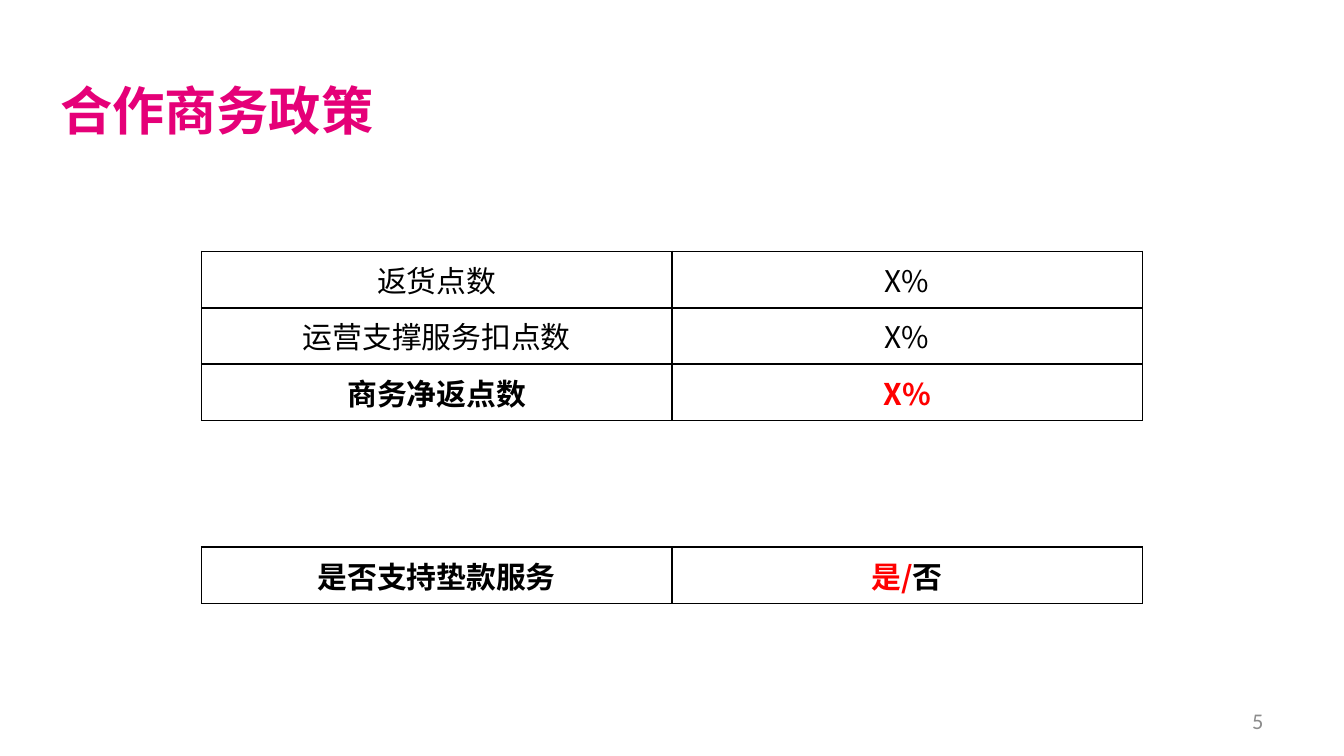
"""Build the slide on business cooperation policy."""
from lxml.etree import SubElement
from pptx import Presentation
from pptx.dml.color import RGBColor
from pptx.enum.text import MSO_ANCHOR as Anchor, PP_ALIGN as Align
from pptx.oxml.ns import qn
from pptx.util import Inches, Pt

COLORS = {"title": "E50078", "text": "000000", "accent": "FF0000", "number": "8C8C8C"}
CJK = "Noto Sans CJK SC"


def add_span(para, text, color, size, bold=False, name=CJK):
    span = para.add_run()
    span.text = text
    formats = {"size": Pt(size), "bold": bold, "name": name}
    for key, value in formats.items():
        setattr(span.font, key, value)
    span.font.color.rgb = RGBColor.from_string(COLORS[color])
    SubElement(span.font._element, qn("a:ea"), typeface=name)


def draw_borders(cell):
    properties = cell._tc.get_or_add_tcPr()
    for position, side in enumerate(("lnL", "lnR", "lnT", "lnB")):
        line = SubElement(properties, qn(f"a:{side}"), w=str(Pt(1)))
        fill = SubElement(line, qn("a:solidFill"))
        SubElement(fill, qn("a:srgbClr"), val=COLORS["text"])
        properties.insert(position, line)


deck = Presentation()
deck.slide_width, deck.slide_height = Inches(10), Inches(10) * 9 // 16
page = deck.slides.add_slide(deck.slide_layouts[6])

title = page.shapes.add_textbox(Inches(0.35), Inches(0.53), Inches(3.94), Inches(0.62))
title.text_frame.word_wrap = True
add_span(title.text_frame.paragraphs[0], "合作商务政策", "title", 28, True)

tables = [
    (1.87, [
        ("返货点数", [("X%", "text")], False),
        ("运营支撑服务扣点数", [("X%", "text")], False),
        ("商务净返点数", [("X%", "accent")], True),
    ]),
    (4.07, [("是否支持垫款服务", [("是/", "accent"), ("否", "text")], True)]),
]
row_height = Inches(0.42)
for top, rows in tables:
    frame = page.shapes.add_table(
        len(rows), 2, Inches(1.5), Inches(top), Inches(7), row_height * len(rows))
    table = frame.table
    for flag in ("first_row", "horz_banding"):
        setattr(table, flag, False)
    for row, (label, values, bold) in enumerate(rows):
        table.rows[row].height = row_height
        for column, spans in enumerate(([(label, "text")], values)):
            cell = table.cell(row, column)
            cell.fill.background()
            cell.vertical_anchor = Anchor.MIDDLE
            draw_borders(cell)
            para = cell.text_frame.paragraphs[0]
            para.alignment = Align.CENTER
            for text, color in spans:
                add_span(para, text, color, 16, bold)

number = page.shapes.add_textbox(Inches(7.17), Inches(5.21), Inches(2.33), Inches(0.3))
number.text_frame.word_wrap = True
number.text_frame.vertical_anchor = Anchor.MIDDLE
para = number.text_frame.paragraphs[0]
para.alignment = Align.RIGHT
add_span(para, "5", "number", 12, name="Calibri")

deck.save("out.pptx")
